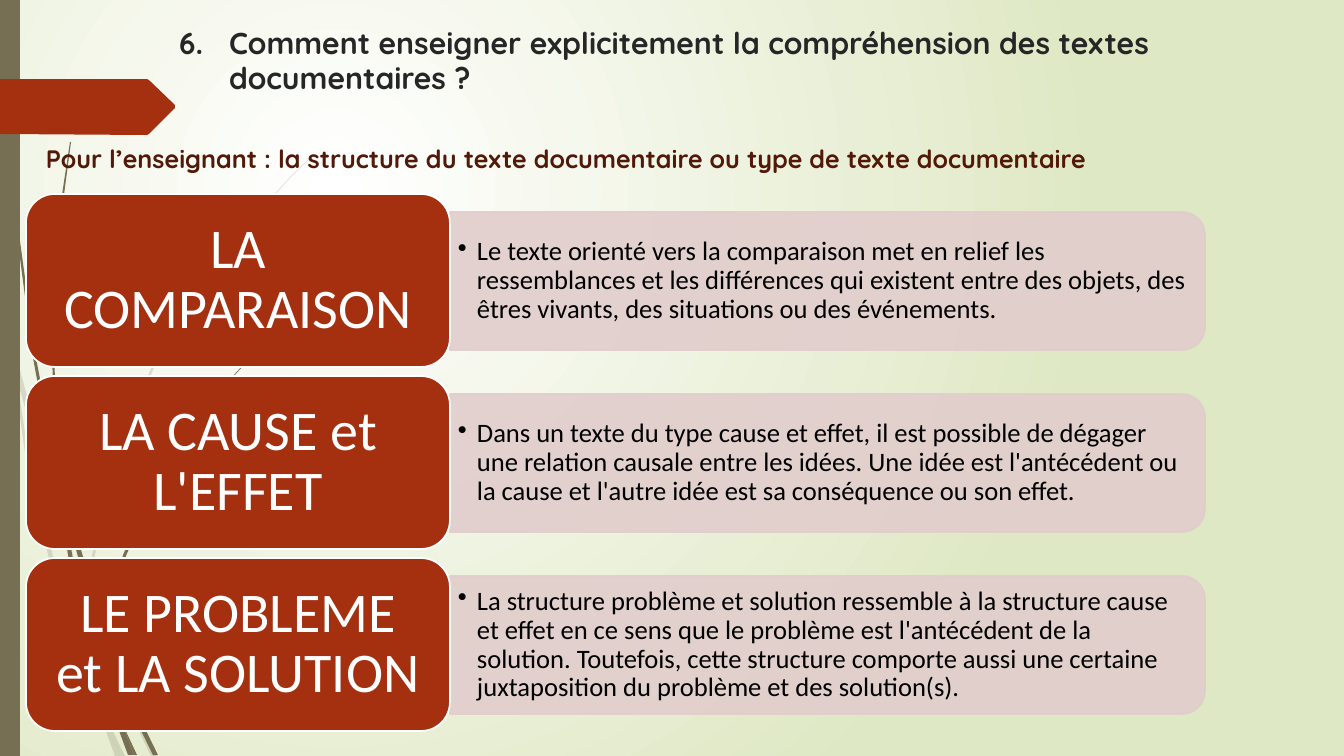
from dataclasses import dataclass

from lxml.etree import SubElement as Sub
from pptx import Presentation
from pptx.dml.color import RGBColor as RGB
from pptx.enum.shapes import MSO_SHAPE as SHAPE
from pptx.enum.text import MSO_ANCHOR as ANCHOR, MSO_AUTO_SIZE as FIT, PP_ALIGN as ALIGN
from pptx.oxml.ns import qn
from pptx.util import Emu, Pt

WIDE, HIGH = 1344, 756
SCALE = 12192000 / WIDE


def px(num):
    return Emu(round(num * SCALE))


@dataclass(frozen=True)
class Theme:
    white: str = "FFFFFF"
    pale: str = "DFE8C4"
    olive: str = "766F54"
    rust: str = "A53010"
    rose: str = "E1CDCC"
    wine: str = "521808"
    ink: str = "262626"
    black: str = "000000"
    head: str = "Quicksand"
    body: str = "Calibri"
    title: float = 21.6
    lead: float = 18
    card: float = 40
    note: float = 19
    edge: float = 1.25


# Outlines of the grass blades behind the cards, in px
FAINT = [
    [(11, 353), (9, 325), (0, 284), (0, 301), (10, 347)],
    [(58, 526), (85, 604), (86, 591), (62, 524), (14, 348), (17, 379)],
    [(93, 612), (89, 601), (89, 615), (124, 700), (151, 756), (156, 756), (128, 698)],
    [(120, 756), (125, 756), (106, 717)],
    [(94, 688), (71, 624), (31, 473), (17, 379), (11, 353), (28, 474), (66, 626),
     (93, 699), (102, 720), (100, 713)],
    [(89, 589), (111, 466), (161, 352), (231, 247), (270, 200), (292, 176), (314, 155),
     (314, 154), (291, 176), (270, 199), (230, 246), (159, 351), (108, 465), (86, 589),
     (86, 591), (89, 601)],
    [(102, 720), (115, 756), (120, 756)],
    [(97, 698), (94, 688), (100, 713), (102, 720), (120, 756), (106, 717)],
]
DARK = [
    [(7, 111), (17, 235), (33, 358), (56, 481), (57, 485), (55, 461), (55, 457),
     (36, 358), (19, 234), (8, 110), (5, 48), (4, 0), (3, 0), (4, 48)],
    [(89, 597), (107, 650), (107, 636), (94, 595), (60, 476), (65, 509)],
    [(114, 654), (111, 646), (112, 661), (133, 714), (153, 755), (158, 755), (137, 712)],
    [(111, 697), (99, 662), (73, 560), (65, 509), (57, 481), (69, 561), (94, 664),
     (112, 714), (118, 728), (117, 723)],
    [(60, 476), (58, 457), (54, 352), (58, 247), (64, 195), (71, 142), (70, 142),
     (62, 195), (56, 247), (52, 352), (55, 453)],
    [(134, 755), (137, 755), (123, 725)],
    [(112, 638), (126, 556), (159, 480), (207, 409), (233, 377), (247, 362), (263, 347),
     (262, 347), (247, 361), (233, 376), (206, 408), (157, 478), (123, 555), (107, 636),
     (111, 646)],
    [(118, 728), (128, 755), (132, 755)],
    [(117, 712), (111, 697), (117, 723), (118, 728), (131, 755), (134, 755), (123, 725)],
]
TAG = [(0, 79), (147, 79), (149, 80), (175, 105), (175, 108), (149, 134), (147, 135), (0, 134)]

TITLE = "Comment enseigner explicitement la compréhension des textes documentaires ?"
LEAD = "Pour l’enseignant : la structure du texte documentaire ou type de texte documentaire"
ROWS = [
    ("LA COMPARAISON",
     "Le texte orienté vers la comparaison met en relief les ressemblances et les "
     "différences qui existent entre des objets, des êtres vivants, des situations ou "
     "des événements."),
    ("LA CAUSE et L'EFFET",
     "Dans un texte du type cause et effet, il est possible de dégager une relation "
     "causale entre les idées. Une idée est l'antécédent ou la cause et l'autre idée "
     "est sa conséquence ou son effet."),
    ("LE PROBLEME et LA SOLUTION",
     "La structure problème et solution ressemble à la structure cause et effet en ce "
     "sens que le problème est l'antécédent de la solution. Toutefois, cette structure "
     "comporte aussi une certaine juxtaposition du problème et des solution(s)."),
]


class Deck:
    def __init__(self, theme):
        self.theme = theme
        self.file = Presentation()
        self.file.slide_width, self.file.slide_height = px(WIDE), px(HIGH)
        self.slide = self.file.slides.add_slide(self.file.slide_layouts[5])
        self.shapes = self.slide.shapes

    def glow(self, inner, outer):
        """Fill the background with a round gradient centred at upper left."""
        fill = self.slide.background.fill
        fill.gradient()
        for stop, tint, at in zip(fill.gradient_stops, (inner, outer), (0, 1)):
            stop.color.rgb, stop.position = RGB.from_string(tint), at
        grad = self.slide.element.find(".//" + qn("a:gradFill"))
        grad.remove(grad.find(qn("a:lin")))
        ring = Sub(grad, qn("a:path"), {"path": "circle"})
        Sub(ring, qn("a:fillToRect"), {"l": "50000", "t": "50000", "r": "100000", "b": "100000"})

    def paint(self, shape, tint, edge=None, alpha=100):
        shape.shadow.inherit = False
        shape.fill.solid()
        shape.fill.fore_color.rgb = RGB.from_string(tint)
        if edge:
            shape.line.color.rgb = RGB.from_string(edge)
            shape.line.width = Pt(self.theme.edge)
        else:
            shape.line.fill.background()
        if alpha < 100:
            for node in shape.element.spPr.iter(qn("a:srgbClr")):
                Sub(node, qn("a:alpha"), {"val": str(alpha * 1000)})
        return shape

    def block(self, kind, box, tint, **look):
        return self.paint(self.shapes.add_shape(kind, *map(px, box)), tint, **look)

    def blade(self, dots, tint, **look):
        pen = self.shapes.build_freeform(*dots[0], scale=SCALE)
        pen.add_line_segments(dots[1:], close=True)
        return self.paint(pen.convert_to_shape(), tint, **look)

    def words(self, shape, text, font, pad=(0, 0), align=ALIGN.LEFT,
              anchor=ANCHOR.MIDDLE, space=1.0):
        frame = shape.text_frame
        across, down = map(px, pad)
        form = {"word_wrap": True, "auto_size": FIT.NONE, "vertical_anchor": anchor,
                "margin_left": across, "margin_right": across,
                "margin_top": down, "margin_bottom": down}
        for key, val in form.items():
            setattr(frame, key, val)
        para = frame.paragraphs[0]
        para.alignment, para.line_spacing = align, space
        run = para.add_run()
        run.text = text
        name, size, tint, bold = font
        for key, val in {"name": name, "size": Pt(size), "bold": bold}.items():
            setattr(run.font, key, val)
        run.font.color.rgb = RGB.from_string(tint)
        return para

    def label(self, box, text, font, **form):
        return self.words(self.shapes.add_textbox(*map(px, box)), text, font, **form)

    def mark(self, para, hang, tag, **attrs):
        """Give a paragraph a bullet or number with a hanging indent."""
        props = para._p.get_or_add_pPr()
        props.set("marL", str(px(hang)))
        props.set("indent", str(px(-hang)))
        Sub(props, qn(tag), attrs)

    def title(self, box, text, font, **form):
        shape = self.shapes.title
        for key, val in zip(("left", "top", "width", "height"), box):
            setattr(shape, key, px(val))
        return self.words(shape, text, font, **form)

    def row(self, top, name, note):
        """Draw a card with its explanation panel on the right."""
        look = self.theme
        left, wide, high = 450, 755, 138
        mid = top + 87
        panel = self.block(SHAPE.ROUND_2_SAME_RECTANGLE,
                           (left + (wide - high) / 2, mid - wide / 2, high, wide),
                           look.rose, edge=look.rose, alpha=90)
        panel.rotation = 90
        para = self.label((left, mid - 62, 748, 124), note,
                          (look.body, look.note, look.black, False), pad=(8, 4), space=0.9)
        self.mark(para, 19, "a:buChar", char="•")
        card = self.block(SHAPE.ROUNDED_RECTANGLE, (26, top, 424, 173), look.rust, edge=look.white)
        self.words(card, name, (look.body, look.card, look.white, False),
                   pad=(17, 8), align=ALIGN.CENTER, space=0.9)


def main():
    look = Theme()
    deck = Deck(look)
    deck.glow(look.white, look.pale)
    for blades, alpha in ((FAINT, 20), (DARK, 100)):
        for dots in blades:
            deck.blade(dots, look.olive, alpha=alpha)
    deck.block(SHAPE.RECTANGLE, (0, 0, 20, HIGH), look.olive)
    deck.blade(TAG, look.rust)

    head = deck.title((169, 22, 1106, 71), TITLE, (look.head, look.title, look.ink, True),
                      pad=(10, 5), anchor=ANCHOR.TOP, space=0.95)
    deck.mark(head, 50, "a:buAutoNum", type="arabicPeriod", startAt="6")
    deck.label((36, 138, 1159, 40), LEAD, (look.head, look.lead, look.wine, True), pad=(10, 0))
    for spot, (name, note) in enumerate(ROWS):
        deck.row(194 + 182 * spot, name, note)
    deck.file.save("out.pptx")


if __name__ == "__main__":
    main()
